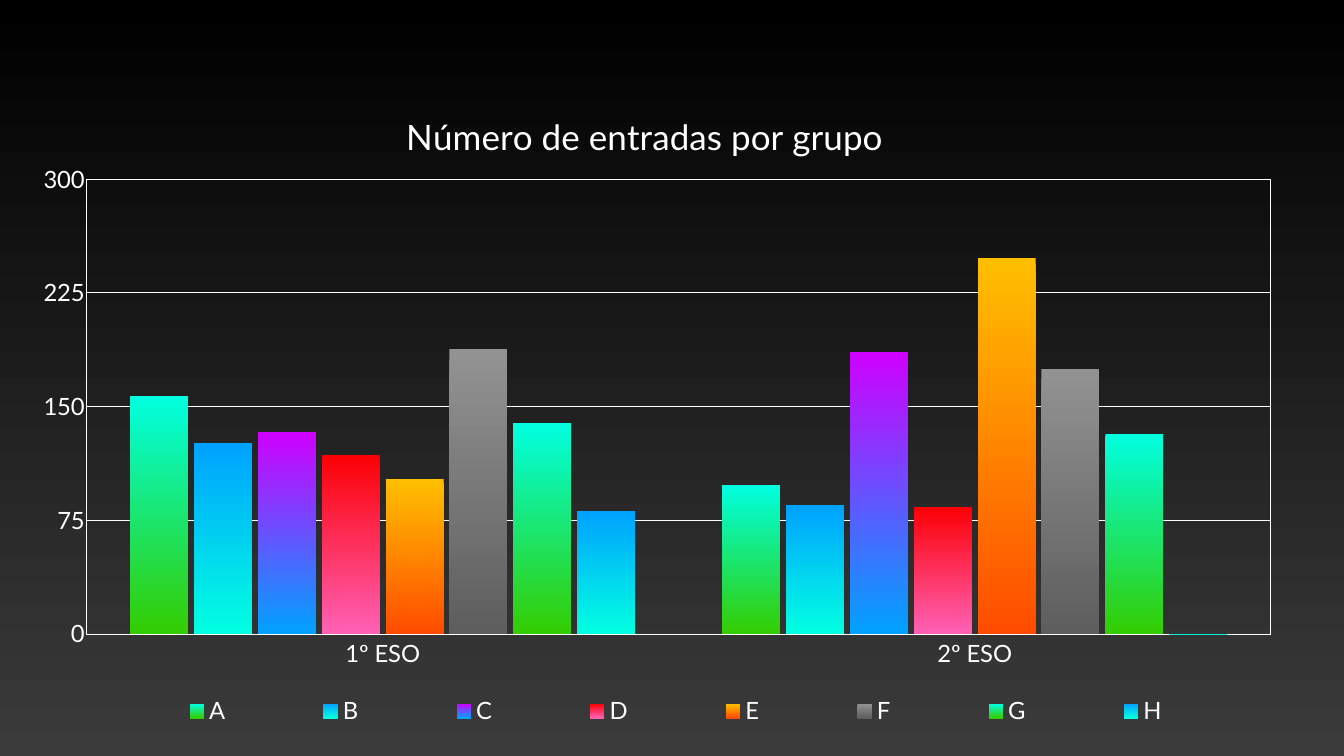
"""Build a slide with a clustered column chart of entries per class group."""
from typing import NamedTuple

from lxml import etree
from pptx import Presentation
from pptx.chart.data import CategoryChartData
from pptx.dml.color import RGBColor
from pptx.enum.chart import XL_CHART_TYPE, XL_LEGEND_POSITION, XL_TICK_LABEL_POSITION, XL_TICK_MARK
from pptx.oxml import parse_xml
from pptx.oxml.ns import qn
from pptx.util import Emu, Pt

COLUMNS = XL_CHART_TYPE.COLUMN_CLUSTERED
BOTTOM = XL_LEGEND_POSITION.BOTTOM
LOW = XL_TICK_LABEL_POSITION.LOW
NO_TICK = XL_TICK_MARK.NONE

EMU_PER_PX = 914400 / 50.4
FONT = "Lato"
LABEL_SIZE = 34
TITLE_SIZE = 50

WHITE = RGBColor(0xFF, 0xFF, 0xFF)
BLACK = RGBColor(0x00, 0x00, 0x00)
CHARCOAL = RGBColor(0x3B, 0x3B, 0x3B)
AQUA = RGBColor(0x01, 0xFF, 0xE1)
GREEN = RGBColor(0x34, 0xCD, 0x01)
BLUE = RGBColor(0x00, 0xA2, 0xFF)
VIOLET = RGBColor(0xCF, 0x00, 0xFF)
RED = RGBColor(0xFB, 0x00, 0x04)
PINK = RGBColor(0xFF, 0x61, 0xB6)
AMBER = RGBColor(0xFF, 0xBF, 0x00)
ORANGE = RGBColor(0xFF, 0x4C, 0x00)
SILVER = RGBColor(0x92, 0x92, 0x92)
GRAY = RGBColor(0x5E, 0x5E, 0x5E)


class Group(NamedTuple):
    name: str
    entries: tuple[int, int]
    top: RGBColor
    bottom: RGBColor


YEARS = ("1º ESO", "2º ESO")
GROUPS = (
    Group("A", (157, 98), AQUA, GREEN),
    Group("B", (126, 85), BLUE, AQUA),
    Group("C", (133, 186), VIOLET, BLUE),
    Group("D", (118, 84), RED, PINK),
    Group("E", (102, 248), AMBER, ORANGE),
    Group("F", (188, 175), SILVER, GRAY),
    Group("G", (139, 132), AQUA, GREEN),
    Group("H", (81, 0), BLUE, AQUA),
)

PLOT_BORDER = (
    '<c:spPr xmlns:c="http://schemas.openxmlformats.org/drawingml/2006/chart" '
    'xmlns:a="http://schemas.openxmlformats.org/drawingml/2006/main"><a:noFill/>'
    f'<a:ln w="{Pt(1)}"><a:solidFill><a:srgbClr val="{WHITE}"/></a:solidFill></a:ln></c:spPr>'
)


def px(length: int) -> Emu:
    return Emu(round(length * EMU_PER_PX))


def fill_downward(fill, top: RGBColor, bottom: RGBColor) -> None:
    fill.gradient()
    fill.gradient_angle = 270
    for stop, color in zip(fill.gradient_stops, (top, bottom)):
        stop.color.rgb = color


def style_font(font, size: int) -> None:
    font.name = FONT
    font.size = Pt(size)
    font.bold = False
    font.color.rgb = WHITE


def style_line(line) -> None:
    line.color.rgb = WHITE
    line.width = Pt(1)


def place(part, index: int, **settings: object) -> None:
    for old in part.findall(qn("c:layout")):
        part.remove(old)
    layout = etree.Element(qn("c:layout"))
    manual = etree.SubElement(layout, qn("c:manualLayout"))
    for tag, value in settings.items():
        etree.SubElement(manual, qn(f"c:{tag}")).set("val", str(value))
    part.insert(index, layout)


def style_axis(axis) -> None:
    axis.major_tick_mark = axis.minor_tick_mark = NO_TICK
    axis.tick_labels.number_format = "General"
    axis.tick_labels.number_format_is_linked = False
    style_font(axis.tick_labels.font, LABEL_SIZE)


def add_entries_chart(slide) -> None:
    data = CategoryChartData()
    data.categories = YEARS
    for group in GROUPS:
        data.add_series(group.name, group.entries)
    chart = slide.shapes.add_chart(COLUMNS, px(24), px(99), px(1253), px(631), data).chart
    style_font(chart.font, 10)

    columns = chart.plots[0]
    columns.gap_width = 150
    columns.overlap = -10
    columns.vary_by_categories = False
    for series, group in zip(columns.series, GROUPS):
        fill_downward(series.format.fill, group.top, group.bottom)

    years, entries = chart.category_axis, chart.value_axis
    style_axis(years)
    years.tick_label_position = LOW
    style_line(years.format.line)
    style_axis(entries)
    entries.minimum_scale, entries.maximum_scale, entries.major_unit = 0, 300, 75
    entries.format.line.fill.background()
    style_line(entries.major_gridlines.format.line)

    chart.has_title = True
    heading = chart.chart_title.text_frame.paragraphs[0]
    heading.text = "Número de entradas por grupo"
    style_font(heading.font, TITLE_SIZE)
    chart.has_legend = True
    chart.legend.position = BOTTOM
    chart.legend.include_in_layout = True
    style_font(chart.legend.font, LABEL_SIZE)

    plot_area = chart.element.find(f".//{qn('c:plotArea')}")
    place(plot_area, 0, layoutTarget="inner", xMode="edge", yMode="edge",
          x=0.05, y=0.127, w=0.945, h=0.721)
    plot_area.append(parse_xml(PLOT_BORDER))
    title = chart.element.find(f".//{qn('c:title')}")
    title.find(qn("c:overlay")).set("val", "1")
    place(title, 1, xMode="edge", yMode="edge", x=0.3, y=0.01)
    legend = chart.element.find(f".//{qn('c:legend')}")
    place(legend, 1, xMode="edge", yMode="edge", x=0.06, y=0.94, w=0.92, h=0.06)


def main() -> None:
    deck = Presentation()
    deck.slide_width, deck.slide_height = px(1344), px(756)
    slide = deck.slides.add_slide(deck.slide_layouts[6])
    fill_downward(slide.background.fill, BLACK, CHARCOAL)
    add_entries_chart(slide)
    deck.save("out.pptx")


if __name__ == "__main__":
    main()
